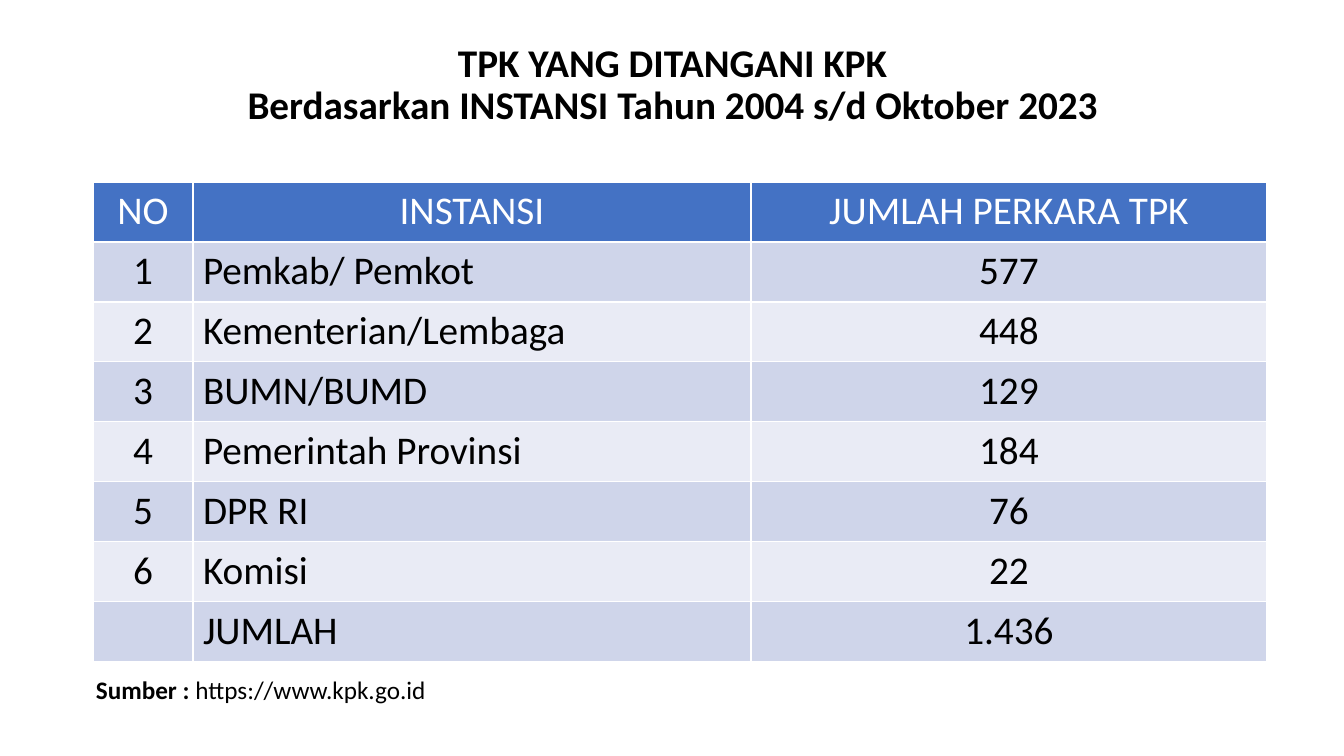
from pptx import Presentation
from pptx.dml.color import RGBColor
from pptx.enum.text import MSO_ANCHOR, PP_ALIGN
from pptx.util import Pt

# Content
TITLE_LINES = ["TPK YANG DITANGANI KPK", "Berdasarkan INSTANSI Tahun 2004 s/d Oktober 2023"]
ROWS = [
    ("NO", "INSTANSI", "JUMLAH PERKARA TPK"),
    ("1", "Pemkab/ Pemkot", "577"),
    ("2", "Kementerian/Lembaga", "448"),
    ("3", "BUMN/BUMD", "129"),
    ("4", "Pemerintah Provinsi", "184"),
    ("5", "DPR RI", "76"),
    ("6", "Komisi", "22"),
    ("", "JUMLAH", "1.436"),
]
SOURCE_RUNS = [("Sumber :", True), (" https://www.kpk.go.id", False)]

# Layout in px
SLIDE_SIZE = (1344, 756)
TITLE_BOX = (93, 15, 1159, 141)
TABLE_LEFT, TABLE_TOP, ROW_HEIGHT = 93, 182, 60
COLUMN_WIDTHS = (100, 558, 516)
SOURCE_BOX = (86, 661, 513, 56)

HEADER_FILL = "4472C4"
BAND_FILLS = ("E9EBF5", "CFD5EA")


def px(value):
    return round(value * 914400 / 100.8)


def color(value):
    return RGBColor.from_string(value)


def style(paragraph, size, text_color="000000", bold=None, align=PP_ALIGN.LEFT):
    paragraph.alignment = align
    font = paragraph.font
    font.name, font.size, font.bold = "Calibri", Pt(size), bold
    font.color.rgb = color(text_color)


presentation = Presentation()
presentation.slide_width, presentation.slide_height = map(px, SLIDE_SIZE)
slide = presentation.slides.add_slide(presentation.slide_layouts[5])

# Title
title = slide.shapes.title
title.left, title.top, title.width, title.height = map(px, TITLE_BOX)
title.text_frame.vertical_anchor = MSO_ANCHOR.MIDDLE
title_paragraph = title.text_frame.paragraphs[0]
title_paragraph.text = "\v".join(TITLE_LINES)
title_paragraph.line_spacing = 0.9
style(title_paragraph, 28, bold=True, align=PP_ALIGN.CENTER)

# Case table
table = slide.shapes.add_table(
    len(ROWS), len(COLUMN_WIDTHS), px(TABLE_LEFT), px(TABLE_TOP),
    px(sum(COLUMN_WIDTHS)), px(ROW_HEIGHT * len(ROWS))).table
for column, width in zip(table.columns, COLUMN_WIDTHS):
    column.width = px(width)
for row_index, values in enumerate(ROWS):
    table.rows[row_index].height = px(ROW_HEIGHT)
    is_header = row_index == 0
    for column_index, value in enumerate(values):
        cell = table.cell(row_index, column_index)
        cell.text = value
        cell.fill.solid()
        cell.fill.fore_color.rgb = color(HEADER_FILL if is_header else BAND_FILLS[row_index % 2])
        centered = is_header or column_index != 1
        style(cell.text_frame.paragraphs[0], 28, "FFFFFF" if is_header else "000000",
              False, PP_ALIGN.CENTER if centered else PP_ALIGN.LEFT)

# Source line
source = slide.shapes.add_textbox(*map(px, SOURCE_BOX))
source.text_frame.word_wrap = True
source.text_frame.vertical_anchor = MSO_ANCHOR.MIDDLE
source_paragraph = source.text_frame.paragraphs[0]
style(source_paragraph, 18)
for text, bold in SOURCE_RUNS:
    run = source_paragraph.add_run()
    run.text = text
    run.font.bold = bold

presentation.save("out.pptx")
